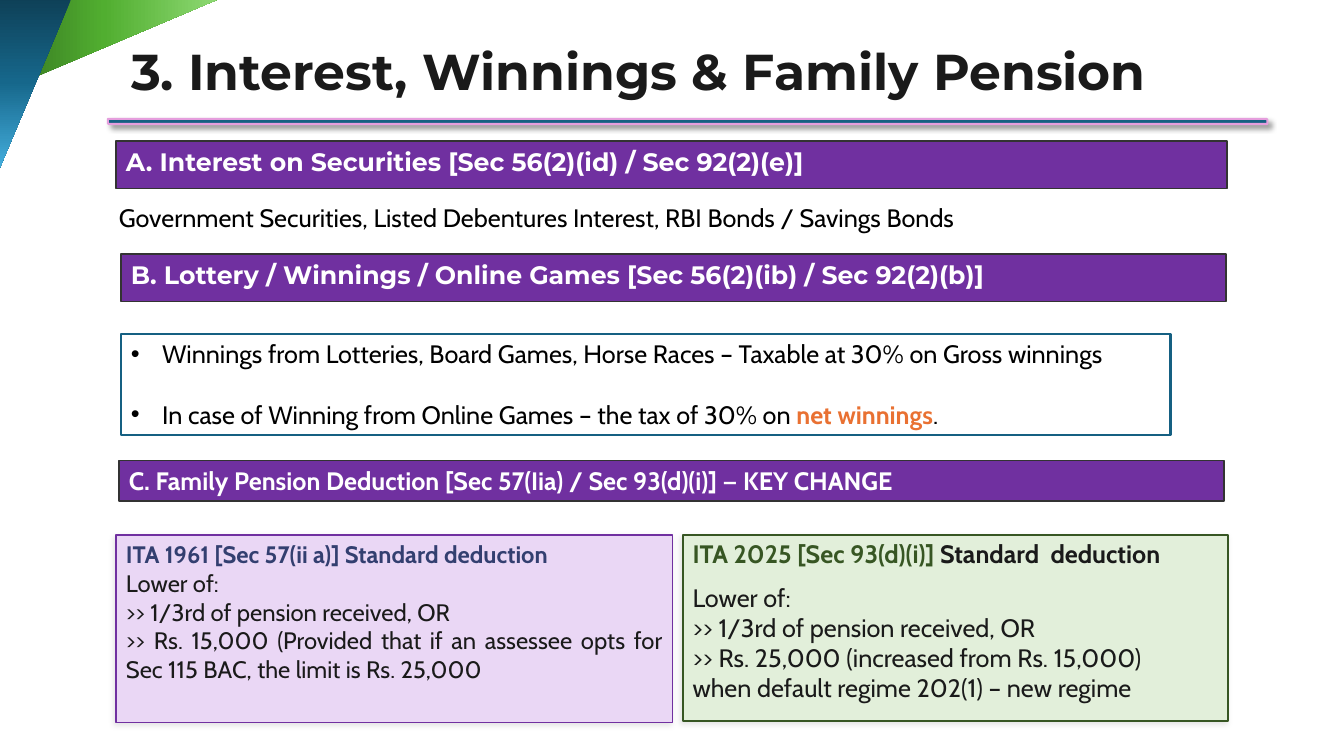
"""Build the slide on interest, winnings and family pension."""
from copy import deepcopy

from lxml import etree
from pptx import Presentation
from pptx.dml.color import RGBColor
from pptx.enum.shapes import MSO_SHAPE
from pptx.enum.text import MSO_ANCHOR, MSO_AUTO_SIZE, PP_ALIGN
from pptx.oxml.ns import qn
from pptx.util import Inches, Pt

RECT, TRIANGLE = MSO_SHAPE.RECTANGLE, MSO_SHAPE.RIGHT_TRIANGLE
RULE = MSO_SHAPE.SNIP_2_DIAG_RECTANGLE
LEFT, JUSTIFY = PP_ALIGN.LEFT, PP_ALIGN.JUSTIFY
HEAD, BODY = "Montserrat", "Cabin"
PURPLE, BLUE, INK = "7030A0", "156082", "1A1A1A"

TITLE = "3. Interest, Winnings & Family Pension"
SECURITIES = "Government Securities, Listed Debentures Interest, RBI Bonds / Savings Bonds"
BANNERS = [
    ("A. Interest on Securities [Sec 56(2)(id) / Sec 92(2)(e)]", (1.15, 1.4, 11.02, 0.47), HEAD),
    ("B. Lottery / Winnings / Online Games [Sec 56(2)(ib) / Sec 92(2)(b)]",
     (1.2, 2.52, 10.96, 0.47), HEAD),
    ("C. Family Pension Deduction [Sec 57(Iia) / Sec 93(d)(i)] — KEY CHANGE",
     (1.18, 4.57, 10.96, 0.4), BODY),
]
WINNINGS = [
    [("Winnings from Lotteries, Board Games, Horse Races – Taxable at 30% on Gross winnings", {})],
    [("In case of Winning from Online Games – the tax of 30% on ", {}),
     ("net winnings", {"color": "E97132", "bold": True}), (".", {})],
]
OLD_HEAD = [("ITA 1961 [Sec 57(ii a)] Standard deduction", {"color": "333F70", "bold": True})]
OLD_RULES = [
    "Lower of:",
    ">> 1/3rd of pension received, OR",
    ">> Rs. 15,000 (Provided that if an assessee opts for Sec 115 BAC, the limit is Rs. 25,000",
]
NEW_HEAD = [("ITA 2025 [Sec 93(d)(i)] ", {"color": "375623", "bold": True}),
            ("Standard  deduction", {"bold": True})]
NEW_RULES = [
    "Lower of:",
    ">> 1/3rd of pension received, OR",
    ">> Rs. 25,000 (increased from Rs. 15,000)\vwhen default regime 202(1) – new regime",
]
CORNERS = [
    ((0.61, -0.64, 0.93, 2.19), 90, False, ("34701F", "51AE30", "8ED973")),
    ((-0.02, -0.02, 0.73, 1.73), 0, True, ("0E4057", "16678B", "46B1E1")),
]
STOPS = (0, 0.48, 1)


def rgb(value):
    """Turn a hex string into a colour."""
    return RGBColor.from_string(value)


def add_text(p, text, size=18, font=BODY, color="000000", bold=False):
    """Add text to a paragraph, with a line break at each vertical tab."""
    for i, part in enumerate(text.split("\v")):
        if i:
            p.add_line_break()
        r = p.add_run()
        r.text = part
        r.font.size, r.font.name, r.font.bold = Pt(size), font, bold
        r.font.color.rgb = rgb(color)


def write(sp, paragraphs, align=LEFT, **fmt):
    """Fill a shape with paragraphs given as lists of (text, format) runs."""
    tf = sp.text_frame
    tf.word_wrap, tf.auto_size = True, MSO_AUTO_SIZE.NONE
    tf.vertical_anchor = MSO_ANCHOR.TOP
    for i, runs in enumerate(paragraphs):
        p = tf.add_paragraph() if i else tf.paragraphs[0]
        p.alignment = align
        for text, own in runs:
            add_text(p, text, **{**fmt, **own})
    return tf


def add_box(s, kind, at, fill=None, line=None, width=1, shadow=None):
    """Add a preset shape; shadow is (opacity, blur, distance, angle)."""
    sp = s.shapes.add_shape(kind, *map(Inches, at))
    sp.shadow.inherit = False
    if fill:
        sp.fill.solid()
        sp.fill.fore_color.rgb = rgb(fill)
    if line:
        sp.line.color.rgb = rgb(line)
        sp.line.width = Pt(width)
    else:
        sp.line.fill.background()
    if shadow:
        opacity, blur, dist, angle = shadow
        effects = sp._element.spPr.find(qn("a:effectLst"))
        outer = etree.SubElement(effects, qn("a:outerShdw"), blurRad=str(Pt(blur)),
                                 dist=str(Pt(dist)), dir=str(angle * 60000), rotWithShape="0")
        clr = etree.SubElement(outer, qn("a:srgbClr"), val="000000")
        etree.SubElement(clr, qn("a:alpha"), val=str(opacity * 1000))
    return sp


def add_corner(s, at, rotation, flip, colors):
    """Add a corner triangle with a three-colour gradient."""
    sp = add_box(s, TRIANGLE, at)
    sp.rotation = rotation
    if flip:
        sp._element.spPr.find(qn("a:xfrm")).set("flipV", "1")
    sp.fill.gradient()
    sp.fill.gradient_angle = 90
    stops = sp._element.spPr.find(qn("a:gradFill")).find(qn("a:gsLst"))
    stops.append(deepcopy(stops[0]))
    for stop, position, color in zip(sp.fill.gradient_stops, STOPS, colors):
        stop.position = position
        stop.color.rgb = rgb(color)


def add_bullet(p):
    """Give a paragraph a hanging bullet."""
    pPr = p._p.get_or_add_pPr()
    pPr.set("marL", str(Inches(0.31)))
    pPr.set("indent", str(Inches(-0.31)))
    etree.SubElement(pPr, qn("a:buFont"), typeface="Arial")
    etree.SubElement(pPr, qn("a:buChar"), char="•")


def main():
    """Lay out the slide and save it."""
    prs = Presentation()
    prs.slide_width, prs.slide_height = Inches(13.33), Inches(7.5)
    s = prs.slides.add_slide(prs.slide_layouts[5])

    add_box(s, RULE, (1.07, 1.18, 11.5, 0.05), BLUE, "E59EDD", 1.5, (40, 4, 3, 45))
    for corner in CORNERS:
        add_corner(s, *corner)

    title = s.shapes.title
    title.left, title.top, title.width, title.height = map(Inches, (1.2, 0.35, 10.78, 0.71))
    write(title, [[(TITLE, {})]], size=36, font=HEAD, color=INK, bold=True)

    for text, at, font in BANNERS:
        banner = add_box(s, RECT, at, PURPLE, "333333")
        write(banner, [[(text, {})]], font=font, color="FFFFFF", bold=True)

    securities = s.shapes.add_textbox(*map(Inches, (1.08, 1.96, 8.77, 0.4)))
    write(securities, [[(SECURITIES, {})]])

    winnings = add_box(s, RECT, (1.2, 3.31, 10.41, 1.01), "FFFFFF", BLUE, 1.5)
    tf = write(winnings, WINNINGS)
    for p in tf.paragraphs:
        add_bullet(p)
    tf.paragraphs[1].space_before = Pt(21.6)

    soft = (10, 4, 2, 135)
    old = add_box(s, RECT, (1.15, 5.31, 5.52, 1.86), "EAD7F5", PURPLE, 1, soft)
    write(old, [OLD_HEAD] + [[(text, {})] for text in OLD_RULES], JUSTIFY, size=17, color=INK)

    new = add_box(s, RECT, (6.77, 5.31, 5.41, 1.84), "E2EFDA", "375623", 1.5, soft)
    tf = write(new, [NEW_HEAD] + [[(text, {})] for text in NEW_RULES], color=INK)
    tf.margin_top = Inches(0.19)
    tf.paragraphs[0].line_spacing = Pt(9.8)
    tf.paragraphs[1].space_before = Pt(9.8)

    prs.save("out.pptx")


if __name__ == "__main__":
    main()
